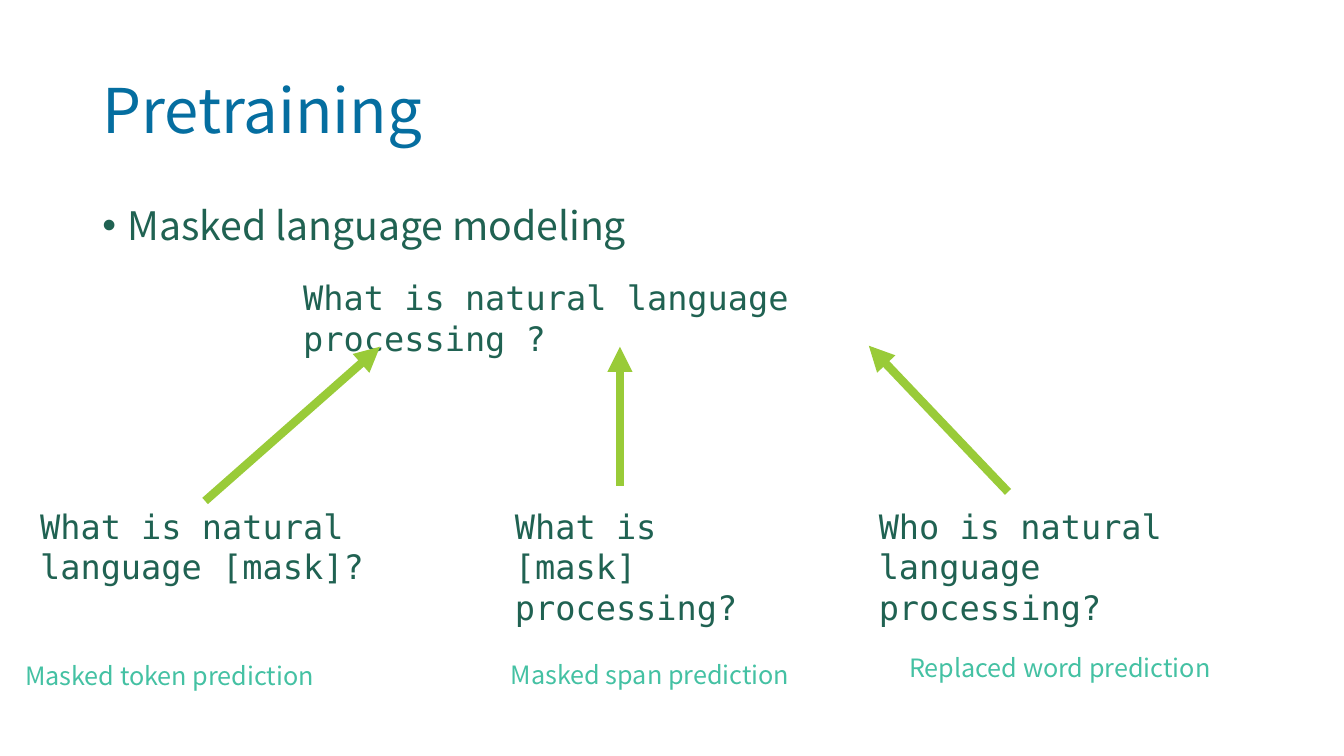
"""Build the slide on pretraining by masked language modeling."""
from lxml import etree
from pptx import Presentation
from pptx.dml.color import RGBColor
from pptx.enum.shapes import MSO_CONNECTOR
from pptx.enum.text import MSO_ANCHOR, MSO_AUTO_SIZE, PP_ALIGN
from pptx.oxml.ns import qn
from pptx.util import Pt

STRAIGHT = MSO_CONNECTOR.STRAIGHT
MIDDLE, TOP = MSO_ANCHOR.MIDDLE, MSO_ANCHOR.TOP
LEFT = PP_ALIGN.LEFT
FIT_SHAPE = MSO_AUTO_SIZE.SHAPE_TO_FIT_TEXT
NO_FIT = MSO_AUTO_SIZE.NONE

BLUE = RGBColor(0x05, 0x6E, 0xA0)
GREEN = RGBColor(0x20, 0x62, 0x52)
MINT = RGBColor(0x44, 0xC1, 0xA3)
LIME = RGBColor(0x99, 0xCB, 0x38)
SANS, MONO = "Noto Sans CJK KR", "DejaVu Sans Mono"

TASKS = [
    ("What is natural language [mask]?", (21.6, 357.84, 249.84, 65.52),
     "Masked token prediction", (10.8, 468, 244.8, 28.8)),
    ("What is [mask] processing?", (360.72, 357.84, 203.04, 65.52),
     "Masked span prediction", (357.84, 467.28, 216.72, 28.8)),
    ("Who is natural language processing?", (620.64, 357.84, 290.16, 65.52),
     "Replaced word prediction", (642.24, 462.24, 251.28, 28.8)),
]


def format_text(tf, text, font, size, color):
    """Write one paragraph of text and format its run."""
    tf.text = text
    p = tf.paragraphs[0]
    p.alignment = LEFT
    f = p.runs[0].font
    f.name, f.size, f.color.rgb = font, Pt(size), color
    return p


def fill_placeholder(ph, box, anchor, text, size, color):
    """Move a placeholder and set its text."""
    ph.left, ph.top, ph.width, ph.height = map(Pt, box)
    tf = ph.text_frame
    tf.auto_size, tf.vertical_anchor = NO_FIT, anchor
    p = format_text(tf, text, SANS, size, color)
    p.line_spacing = 0.9
    return p


def add_bullet(p, indent):
    """Give a paragraph a round bullet with a hanging indent."""
    ppr = p._p.get_or_add_pPr()
    ppr.set("marL", str(Pt(indent)))
    ppr.set("indent", str(-Pt(indent)))
    etree.SubElement(ppr, qn("a:buFont")).set("typeface", "Arial")
    etree.SubElement(ppr, qn("a:buChar")).set("char", "•")


def add_text(s, box, text, font, size, color):
    """Add a wrapping text box that grows with its text."""
    sp = s.shapes.add_textbox(*map(Pt, box))
    tf = sp.text_frame
    tf.word_wrap, tf.auto_size = True, FIT_SHAPE
    format_text(tf, text, font, size, color)
    return sp


def add_arrow(s, start, end):
    """Add a thick arrow that points at its end."""
    arrow = s.shapes.add_connector(STRAIGHT, *map(Pt, start + end))
    arrow.line.color.rgb, arrow.line.width = LIME, Pt(6)
    etree.SubElement(arrow.line._get_or_add_ln(), qn("a:tailEnd")).set("type", "triangle")
    etree.SubElement(arrow._element.spPr, qn("a:effectLst"))
    return arrow


def main():
    """Create the presentation and save it."""
    prs = Presentation()
    prs.slide_width, prs.slide_height = Pt(960), Pt(540)
    s = prs.slides.add_slide(prs.slide_layouts[1])

    fill_placeholder(s.shapes.title, (66, 28.8, 828, 104.4), MIDDLE, "Pretraining", 44, BLUE)
    p = fill_placeholder(s.placeholders[1], (66, 144, 828, 342.72), TOP,
                         "Masked language modeling", 28, GREEN)
    p.space_before = Pt(10)
    add_bullet(p, 18)

    sentence = add_text(s, (209.52, 194.4, 541.44, 36),
                        "What is natural language processing ?", MONO, 24, GREEN)
    sentence.text_frame.margin_right = Pt(40)

    inputs = []
    for example, example_box, task, task_box in TASKS:
        inputs.append(add_text(s, example_box, example, MONO, 24, GREEN))
        add_text(s, task_box, task, SANS, 18, MINT)

    token_arrow = add_arrow(s, (146.5, 357.84), (271.44, 247.68))
    token_arrow.begin_connect(inputs[0], 0)
    add_arrow(s, (442.8, 347.04), (442.8, 247.68))
    add_arrow(s, (720, 351.36), (620.64, 246.96))

    prs.save("out.pptx")


if __name__ == "__main__":
    main()
